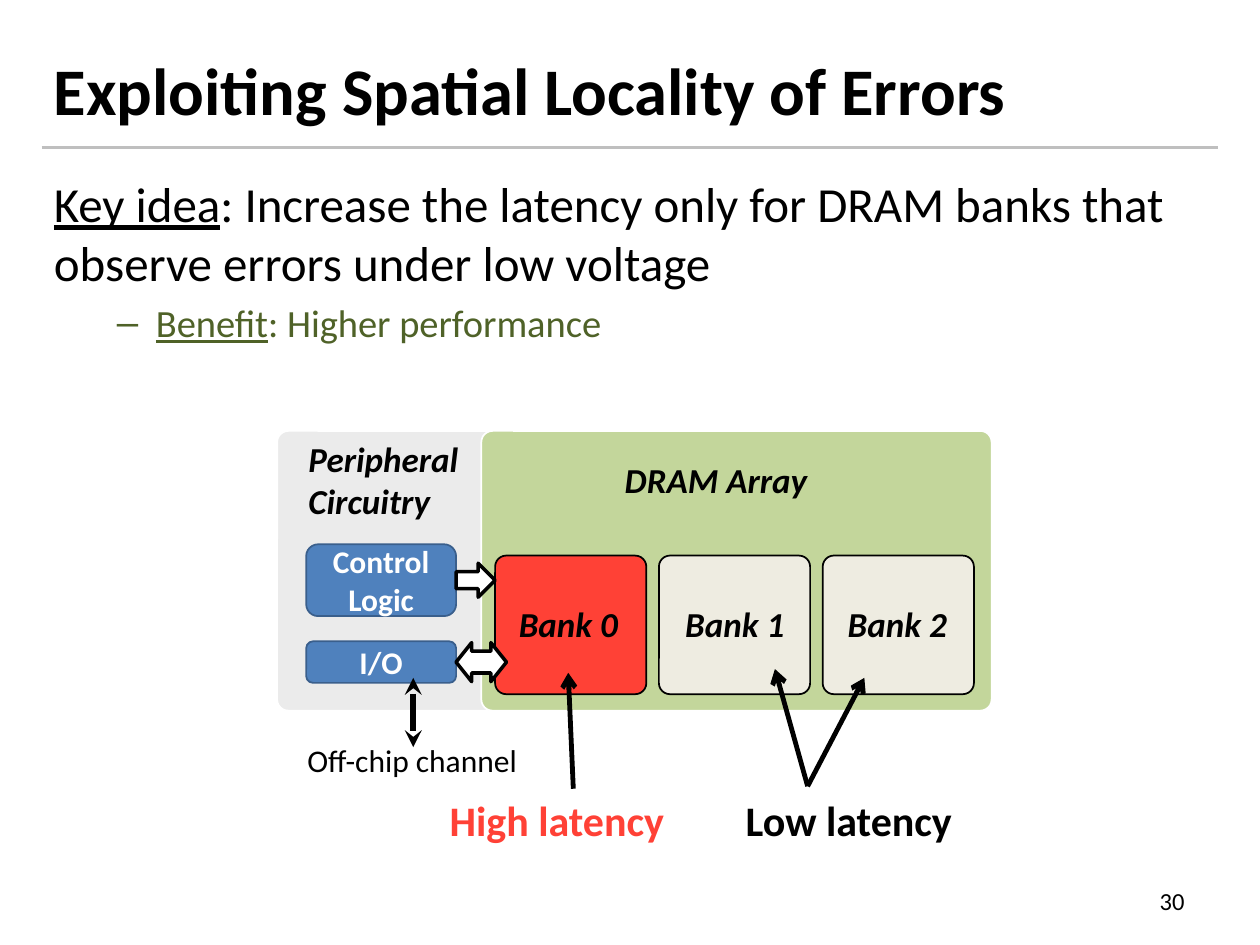
from lxml import etree
from pptx import Presentation
from pptx.dml.color import RGBColor
from pptx.enum import shapes, text
from pptx.oxml.ns import qn
from pptx.util import Inches, Pt

BLACK, WHITE = RGBColor(0, 0, 0), RGBColor(255, 255, 255)
RULE = RGBColor(0xBF, 0xBF, 0xBF)
RED = RGBColor(0xFF, 0x41, 0x36)
OLIVE = RGBColor(0x4F, 0x62, 0x28)
GREY = RGBColor(0xEB, 0xEB, 0xEB)
GREEN = RGBColor(0xC3, 0xD6, 0x9B)
CREAM = RGBColor(0xEE, 0xEC, 0xE1)
BLUE, NAVY = RGBColor(0x4F, 0x81, 0xBD), RGBColor(0x3A, 0x5F, 0x8C)
SHAPE, ALIGN = shapes.MSO_SHAPE, text.PP_ALIGN
W, H, MARGIN = 10, 7.5, 0.33
FULL = W - 2 * MARGIN

# Content: heading and key idea
TITLE = "Exploiting Spatial Locality of Errors"
IDEA = ("Key idea", ": Increase the latency only for DRAM banks that observe errors under low voltage")
BENEFIT = ("Benefit", ": Higher performance")

# Content: diagram (places are left, top, width, height)
CHIP_TOP, CHIP_H = 3.42, 2.22
REGIONS = [(2.2, 5.67, GREY), (3.82, 4.05, GREEN)]
REGION_LABELS = [("Peripheral\nCircuitry", (2.35, CHIP_TOP, 1.47, 0.77)),
                 ("DRAM Array", (4.86, 3.59, 2.02, 0.44))]
BLOCKS = [("Control\nLogic", 4.32, 0.57), ("I/O", 5.09, 0.33)]
BLOCK_X, BLOCK_W = 2.43, 1.19
BANKS = [("Bank 0", RED, 0.09), ("Bank 1", CREAM, 0.11), ("Bank 2", CREAM, 0.1)]
BANK_X, BANK_Y, BANK_W, BANK_H, BANK_STEP = 3.93, 4.41, 1.2, 1.1, 1.3
SIGNALS = [(SHAPE.RIGHT_ARROW, 4.47, 0.31, 0.27, ()),
           (SHAPE.LEFT_RIGHT_ARROW, 5.1, 0.4, 0.31, (0.56, 0.4))]
NOTES = [("Off-chip channel", (2.34, 5.83, 1.88, 0.4), 18, BLACK, False),
         ("High latency", (3.47, 6.26, 2.17, 0.5), 24, RED, True),
         ("Low latency", (5.82, 6.26, 2.08, 0.5), 24, BLACK, True)]
POINTERS = [((4.55, 6.26), (4.51, 5.34)),
            ((6.41, 6.24), (6.15, 5.31)),
            ((6.41, 6.24), (6.86, 5.38))]

prs = Presentation()
prs.slide_width, prs.slide_height = Inches(W), Inches(H)
s = prs.slides.add_slide(prs.slide_layouts[6])


def style(p, size, color=BLACK, bold=False, italic=False):
    for r in p.runs:
        f = r.font
        f.name, f.size, f.bold, f.italic = "Calibri", Pt(size), bold, italic
        f.color.rgb = color


def add_text(at, words, size, color=BLACK, bold=False, italic=False,
             align=ALIGN.LEFT, anchor=text.MSO_ANCHOR.TOP, wrap=True):
    tf = s.shapes.add_textbox(*map(Inches, at)).text_frame
    tf.word_wrap, tf.vertical_anchor = wrap, anchor
    p = tf.paragraphs[0]
    p.text, p.alignment = words, align
    style(p, size, color, bold, italic)


def add_box(kind, at, fill, line, width=1, adj=()):
    sp = s.shapes.add_shape(kind, *map(Inches, at))
    sp.shadow.inherit = False
    sp.fill.solid()
    sp.fill.fore_color.rgb = fill
    sp.line.color.rgb, sp.line.width = line, Pt(width)
    for i, value in enumerate(adj):
        sp.adjustments[i] = value
    return sp


def add_line(start, end, color, width, head=None, tail=None):
    c = s.shapes.add_connector(shapes.MSO_CONNECTOR.STRAIGHT, *map(Inches, start + end))
    c.line.color.rgb, c.line.width = color, Pt(width)
    for tag, kind in (("a:headEnd", head), ("a:tailEnd", tail)):
        if kind:
            etree.SubElement(c.line._get_or_add_ln(), qn(tag), type=kind)
    etree.SubElement(c._element.spPr, qn("a:effectLst"))


def add_lead(p, parts, size, color=BLACK):
    """Write an underlined lead-in followed by its plain sentence."""
    for words in parts:
        p.add_run().text = words
    style(p, size, color)
    p.runs[0].font.underline = True


# Heading, rule and page number
add_line((MARGIN, 1.17), (W - MARGIN, 1.17), RULE, 1.5)
add_text((MARGIN, 0.08, FULL, 1.25), TITLE, 38, bold=True, anchor=text.MSO_ANCHOR.MIDDLE)
add_text((7.17, 6.95, 2.33, 0.4), "30", 14, align=ALIGN.RIGHT, anchor=text.MSO_ANCHOR.MIDDLE)

# Key idea with its dashed benefit
tf = s.shapes.add_textbox(*map(Inches, (MARGIN, 1.33, FULL, 1.6))).text_frame
tf.word_wrap = True
add_lead(tf.paragraphs[0], IDEA, 28)
p = tf.add_paragraph()
p.level, p.space_before = 1, Pt(4.4)
pPr = p._p.get_or_add_pPr()
pPr.set("marL", str(Inches(0.81)))
pPr.set("indent", str(Inches(-0.31)))
etree.SubElement(pPr, qn("a:buFont"), typeface="Arial")
etree.SubElement(pPr, qn("a:buChar"), char="–")
add_lead(p, BENEFIT, 22, OLIVE)

# Chip regions
for x, w, fill in REGIONS:
    add_box(SHAPE.ROUNDED_RECTANGLE, (x, CHIP_TOP, w, CHIP_H), fill, WHITE, adj=(0.04,))
for words, at in REGION_LABELS:
    add_text(at, words, 20, bold=True, italic=True)

# Peripheral blocks
for words, y, h in BLOCKS:
    sp = add_box(SHAPE.ROUNDED_RECTANGLE, (BLOCK_X, y, BLOCK_W, h), BLUE, NAVY)
    sp.text_frame.vertical_anchor = text.MSO_ANCHOR.MIDDLE
    p = sp.text_frame.paragraphs[0]
    p.text, p.alignment = words, ALIGN.CENTER
    style(p, 18, WHITE, bold=True)

# Banks
for i, (words, fill, inset) in enumerate(BANKS):
    x = BANK_X + i * BANK_STEP
    add_box(SHAPE.ROUNDED_RECTANGLE, (x, BANK_Y, BANK_W, BANK_H), fill, BLACK, adj=(0.08,))
    add_text((x + inset, 4.73, 1.07, 0.44), words, 20, bold=True, italic=True)

# Signals between periphery and array, and off the chip
for kind, y, w, h, adj in SIGNALS:
    add_box(kind, (BLOCK_X + BLOCK_W, y, w, h), WHITE, BLACK, 2, adj)
add_line((3.28, 5.38), (3.28, 5.93), BLACK, 3.25, "stealth", "stealth")

# Notes and their pointers
for words, at, size, color, bold in NOTES:
    add_text(at, words, size, color, bold, wrap=False)
for start, end in POINTERS:
    add_line(start, end, BLACK, 2.75, tail="arrow")

prs.save("out.pptx")
